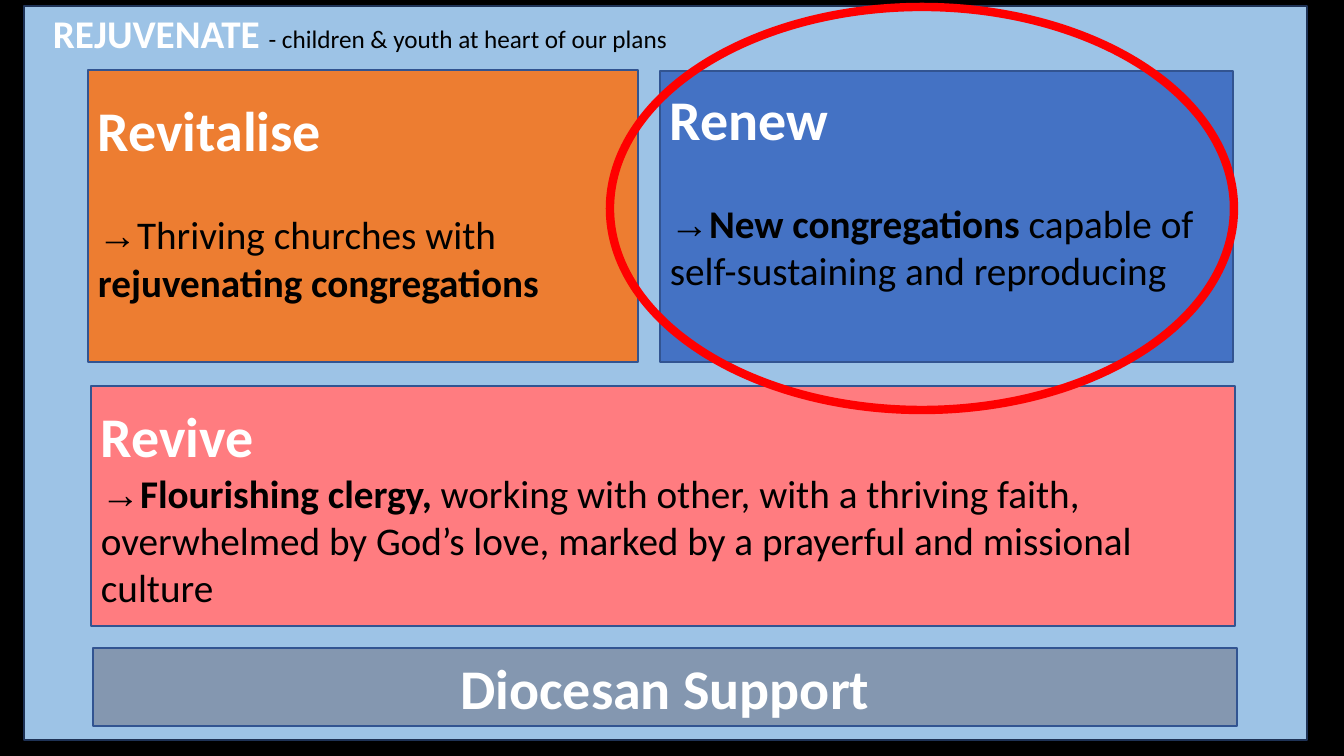
from dataclasses import dataclass
from pptx import Presentation
from pptx.dml.color import RGBColor as RGB
from pptx.enum.shapes import MSO_SHAPE as Shape
from pptx.enum.text import MSO_ANCHOR as Anchor, PP_ALIGN as Align
from pptx.util import Emu, Pt


@dataclass(frozen=True)
class Theme:
    back: str = "000000"
    panel: str = "9DC3E6"
    edge: str = "1E3256"
    rim: str = "325491"
    orange: str = "ED7D31"
    blue: str = "4472C4"
    pink: str = "FF7C80"
    slate: str = "8497B0"
    ring: str = "FF0000"
    light: str = "FFFFFF"
    dark: str = "000000"
    font: str = "Calibri"
    sign: str = "Arial"
    head: int = 40
    body: int = 28
    note: int = 18


T = Theme()
WIDTH, HEIGHT = 1344, 756
PANEL = (24, 6, 1283, 734)
BANNER = (43, 4, 745, 105)
RING = (610, 7, 624, 403)
TITLE, NOTE = "REJUVENATE ", "- children & youth at heart of our plans"
ARROW = "→"

# box, fill, heading, body runs (text, bold), gap above body in pt, foot inset in px
CARDS = [
    ((93, 648, 1144, 78), T.slate, "Diocesan Support", [], 0, 5),
    ((88, 70, 550, 292), T.orange, "Revitalise",
     [("Thriving churches with ", False), ("rejuvenating congregations", True)], 34, 36),
    ((660, 71, 573, 291), T.blue, "Renew",
     [("New congregations ", True),
      ("capable of self-sustaining and reproducing", False)], 34, 60),
    ((91, 386, 1144, 240), T.pink, "Revive",
     [("Flourishing clergy, ", True),
      ("working with other, with a thriving faith, overwhelmed by God’s love, "
       "marked by a prayerful and missional culture", False)], 0, 5),
]


def px(n):
    return Emu(round(n * 914400 / 100.8))


def rgb(code):
    return RGB.from_string(code)


def draw(slide, kind, box, fill, line, width=1):
    shape = slide.shapes.add_shape(kind, *map(px, box))
    shape.shadow.inherit = False
    if fill:
        shape.fill.solid()
        shape.fill.fore_color.rgb = rgb(fill)
    else:
        shape.fill.background()
    shape.line.color.rgb = rgb(line)
    shape.line.width = Pt(width)
    return shape


def style(font, size, color, bold=None, name=T.font):
    font.name, font.size, font.bold = name, Pt(size), bold
    font.color.rgb = rgb(color)


def write(para, text):
    run = para.add_run()
    run.text = text
    return run.font


def add_card(slide, box, fill, title, body, gap, foot):
    frame = draw(slide, Shape.RECTANGLE, box, fill, T.rim).text_frame
    frame.word_wrap = True
    frame.vertical_anchor = Anchor.MIDDLE
    frame.margin_bottom = px(foot)
    head = frame.paragraphs[0]
    head.text = title
    head.alignment = Align.LEFT if body else Align.CENTER
    style(head.font, T.head, T.light, True)
    if body:
        para = frame.add_paragraph()
        para.alignment = Align.LEFT
        para.space_before = Pt(gap)
        style(para.font, T.body, T.dark)
        style(write(para, ARROW), T.body, T.dark, False, T.sign)
        for text, bold in body:
            style(write(para, text), T.body, T.dark, bold)


def add_banner(slide):
    frame = slide.shapes.add_textbox(*map(px, BANNER)).text_frame
    frame.word_wrap = True
    para = frame.paragraphs[0]
    style(write(para, TITLE), T.body, T.light, True)
    style(write(para, NOTE), T.note, T.dark, False)


def main():
    deck = Presentation()
    deck.slide_width, deck.slide_height = px(WIDTH), px(HEIGHT)
    slide = deck.slides.add_slide(deck.slide_layouts[6])
    slide.background.fill.solid()
    slide.background.fill.fore_color.rgb = rgb(T.back)
    draw(slide, Shape.RECTANGLE, PANEL, T.panel, T.edge)
    add_banner(slide)
    for card in CARDS:
        add_card(slide, *card)
    draw(slide, Shape.OVAL, RING, None, T.ring, 6)
    deck.save("out.pptx")


if __name__ == "__main__":
    main()
